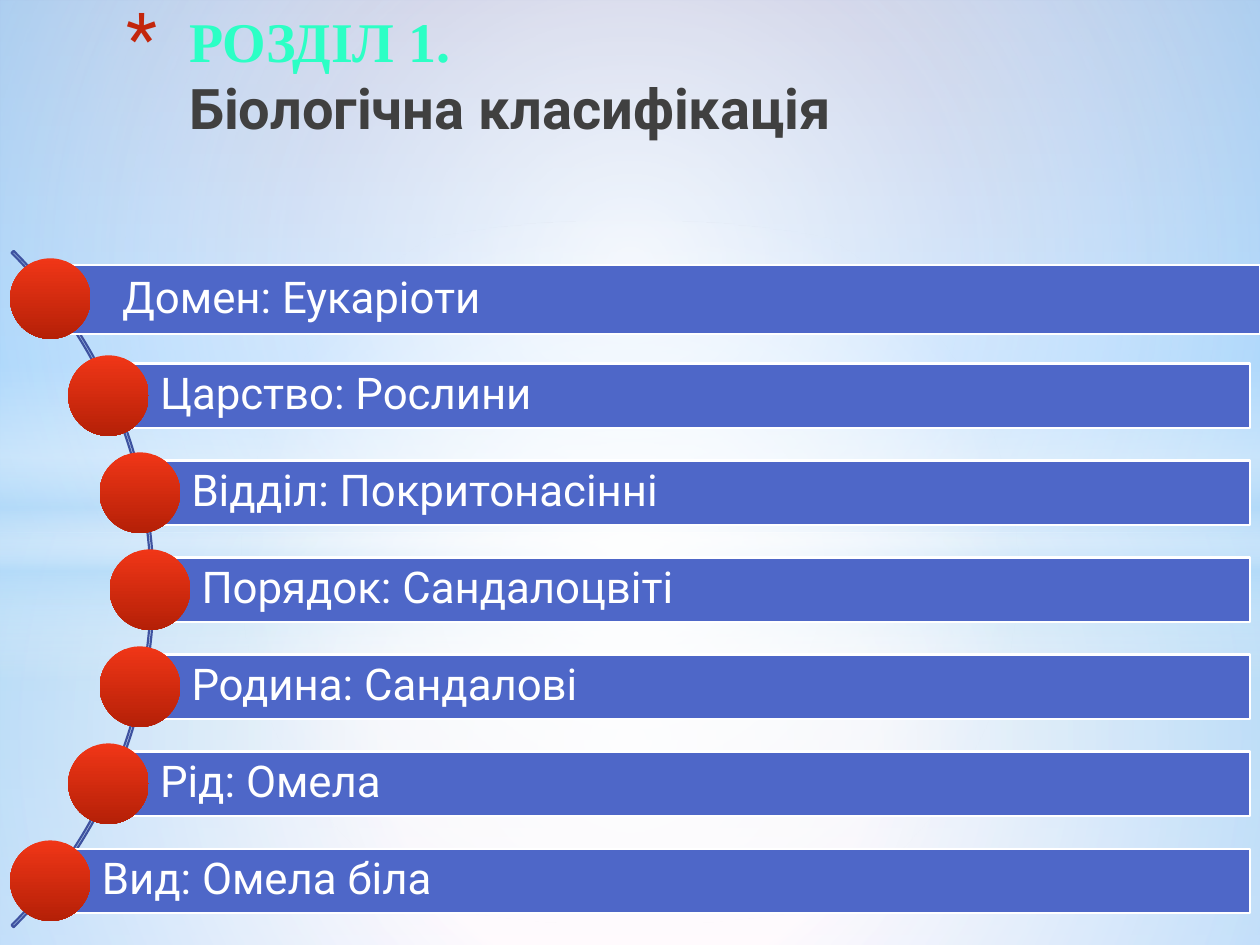
import math

from lxml import etree
from pptx import Presentation
from pptx.dml.color import RGBColor
from pptx.enum import shapes, text
from pptx.oxml.ns import nsdecls, qn
from pptx.util import Inches, Pt

COLORS = {
    "bar": "4E67C8", "arc": "3E52A0", "white": "FFFFFF", "bullet": "C3260C",
    "chapter": "2CFFC5", "topic": "404040", "sky": "B4DCFA",
}
WHITE, SKY = COLORS["white"], COLORS["sky"]

CHAPTER = "РОЗДІЛ 1. "
TOPIC = "Біологічна класифікація"
RANKS = [
    "Домен: Еукаріоти",
    "Царство: Рослини",
    "Відділ: Покритонасінні",
    "Порядок: Сандалоцвіті",
    "Родина: Сандалові",
    "Рід: Омела",
    "Вид: Омела біла",
]

# Gradient stops: position %, colour, opacity %
BACKDROP = [(0, "919ACA", 100), (40, "85C2FF", 100), (70, "C4D6EB", 100), (100, "FFEBFA", 100)]
DOT_FILL = [(0, "F03617", 100), (100, "B52007", 100)]
# Light effects: shape, box, stops, radial
GLOWS = [
    ("RECTANGLE", (0, 4.23, 10, 3.27), [(0, WHITE, 91), (37, WHITE, 76), (100, SKY, 79)], True),
    ("RECTANGLE", (0, 0, 10, 4.23), [(0, WHITE, 89), (48, WHITE, 62), (100, SKY, 79)], True),
    ("RECTANGLE", (0, 2.9, 10, 2.5),
     [(0, WHITE, 0), (29, WHITE, 30), (45, SKY, 40), (55, WHITE, 26), (65, SKY, 60),
      (100, WHITE, 0)], False),
    ("OVAL", (0, 1.75, 10, 5.58), [(0, WHITE, 100), (54, WHITE, 0)], True),
]

ARC_BOX = (-6.37, 0.88, 7.59, 7.59)
ARC_CENTER_X, ARC_RADIUS = -2.58, 3.77
DOT, FIRST_DOT_TOP, PITCH = 0.64, 2.05, 0.77
BAR_HEIGHT, BAR_RIGHT = 0.51, 9.92
FIRST_BAR = (0.56, 2.1, 9.44, 0.55)


def rgb(name):
    return RGBColor.from_string(COLORS[name])


def set_gradient(fill, owner, stops, radial=False):
    """Replace the fill inside the XML element owner by a gradient."""
    fill.solid()
    fill.fore_color.rgb = rgb("white")
    stop_xml = "".join(
        f'<a:gs pos="{pos * 1000}"><a:srgbClr val="{color}">'
        f'<a:alpha val="{opacity * 1000}"/></a:srgbClr></a:gs>'
        for pos, color, opacity in stops)
    direction = (
        '<a:path path="circle"><a:fillToRect l="50000" t="50000" r="50000" b="50000"/></a:path>'
        if radial else '<a:lin ang="5400000" scaled="0"/>')
    gradient = etree.fromstring(
        f'<a:gradFill {nsdecls("a")} rotWithShape="1"><a:gsLst>{stop_xml}</a:gsLst>'
        f'{direction}</a:gradFill>')
    solid = next(owner.iter(qn("a:solidFill")))
    solid.getparent().replace(solid, gradient)


def add_plain_shape(slide, kind, box):
    shape = slide.shapes.add_shape(
        getattr(shapes.MSO_SHAPE, kind), *(Inches(length) for length in box))
    shape.shadow.inherit = False
    shape.line.fill.background()
    return shape


def set_line(shape, color):
    shape.line.color.rgb = rgb(color)
    shape.line.width = Pt(1.25)


def format_run(run, size, font, color, bold=False):
    run.font.size, run.font.name, run.font.bold = Pt(size), font, bold
    run.font.color.rgb = rgb(color)


def add_title(slide):
    title = slide.shapes.title
    title.left, title.top, title.width, title.height = map(Inches, (0.7, 0, 8.5, 1.77))
    frame = title.text_frame
    frame.auto_size = text.MSO_AUTO_SIZE.NONE
    frame.vertical_anchor = text.MSO_ANCHOR.TOP
    frame.text = f"{CHAPTER}\v{TOPIC}"
    heading = frame.paragraphs[0]
    heading.alignment = text.PP_ALIGN.LEFT
    chapter, topic = heading.runs
    format_run(chapter, 32, "Times New Roman", "chapter", True)
    format_run(topic, 32, "Roboto", "topic", True)

    properties = heading._p.get_or_add_pPr()
    properties.set("marL", str(Inches(0.7)))
    properties.set("indent", str(Inches(-0.5)))
    bullet = etree.fromstring(
        f'<a:pPr {nsdecls("a")}><a:buClr><a:srgbClr val="{COLORS["bullet"]}"/></a:buClr>'
        '<a:buSzPct val="128000"/><a:buFont typeface="Roboto"/><a:buChar char="*"/></a:pPr>')
    properties.extend(list(bullet))
    slide.shapes._spTree.append(title._element)  # in front of the glows


def add_rank(slide, index, rank):
    dot_top = FIRST_DOT_TOP + index * PITCH
    rise = (index - (len(RANKS) - 1) / 2) * PITCH
    dot_center = ARC_CENTER_X + math.sqrt(ARC_RADIUS ** 2 - rise ** 2)
    bar_box = FIRST_BAR if index == 0 else (
        dot_center, dot_top + (DOT - BAR_HEIGHT) / 2, BAR_RIGHT - dot_center, BAR_HEIGHT)

    bar = add_plain_shape(slide, "RECTANGLE", bar_box)
    bar.fill.solid()
    bar.fill.fore_color.rgb = rgb("bar")
    set_line(bar, "white")
    frame = bar.text_frame
    frame.word_wrap = True
    frame.vertical_anchor = text.MSO_ANCHOR.MIDDLE
    frame.margin_left = Inches(0.41)
    frame.margin_top = frame.margin_right = frame.margin_bottom = Inches(0.07)
    frame.text = rank
    label = frame.paragraphs[0]
    label.alignment = text.PP_ALIGN.LEFT
    label.line_spacing = 0.9
    format_run(label.runs[0], 25, "Roboto", "white")

    dot = add_plain_shape(slide, "OVAL", (dot_center - DOT / 2, dot_top, DOT, DOT))
    set_gradient(dot.fill, dot._element.spPr, DOT_FILL)


def main():
    deck = Presentation()
    deck.slide_width, deck.slide_height = Inches(10), Inches(7.5)
    slide = deck.slides.add_slide(deck.slide_layouts.get_by_name("Title Only"))
    set_gradient(slide.background.fill, slide._element, BACKDROP)
    for kind, box, stops, radial in GLOWS:
        glow = add_plain_shape(slide, kind, box)
        set_gradient(glow.fill, glow._element.spPr, stops, radial)
    add_title(slide)

    arc = add_plain_shape(slide, "BLOCK_ARC", ARC_BOX)
    arc.adjustments[0], arc.adjustments[1], arc.adjustments[2] = 189, 27, 0.003
    arc.fill.background()
    set_line(arc, "arc")
    for index, rank in enumerate(RANKS):
        add_rank(slide, index, rank)
    deck.save("out.pptx")


if __name__ == "__main__":
    main()
